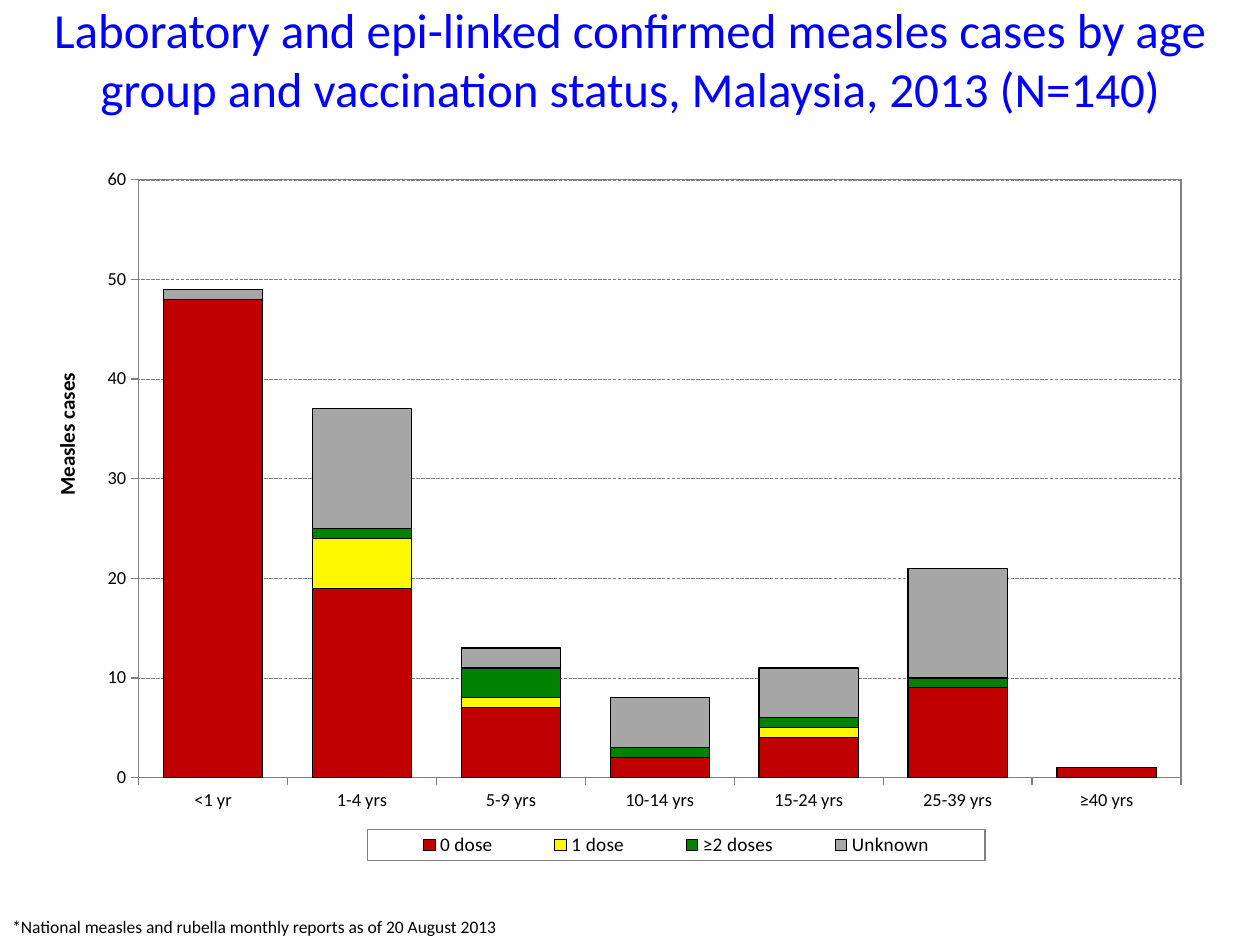
import pptx
import pptx.chart.data
import pptx.dml.color
import pptx.enum.chart
import pptx.enum.dml
import pptx.enum.text
import pptx.oxml
import pptx.oxml.ns
import pptx.util

Cm, Pt = pptx.util.Cm, pptx.util.Pt
RGBColor = pptx.dml.color.RGBColor
qn = pptx.oxml.ns.qn

BLACK = RGBColor(0x00, 0x00, 0x00)
BLUE = RGBColor(0x00, 0x00, 0xFF)
GREY = RGBColor(0x80, 0x80, 0x80)
FONT = "Calibri"

TITLE = ("Laboratory and epi-linked confirmed measles cases by age group "
         "and vaccination status, Malaysia, 2013 (N=140)")
SOURCE = "*National measles and rubella monthly reports as of 20 August 2013"
AXIS_TITLE = "Measles cases"
AGE_GROUPS = ["<1 yr", "1-4 yrs", "5-9 yrs", "10-14 yrs",
              "15-24 yrs", "25-39 yrs", "≥40 yrs"]
DOSES = [
    ("0 dose", RGBColor(0xC0, 0x00, 0x00), [48, 19, 7, 2, 4, 9, 1]),
    ("1 dose", RGBColor(0xFE, 0xF8, 0x00), [0, 5, 1, 0, 1, 0, 0]),
    ("≥2 doses", RGBColor(0x00, 0x82, 0x00), [0, 1, 3, 1, 1, 1, 0]),
    ("Unknown", RGBColor(0xA6, 0xA6, 0xA6), [1, 12, 2, 5, 5, 11, 0]),
]

NAMESPACES = pptx.oxml.ns.nsdecls("a", "c")
TITLE_SHADOW = (f'<a:effectLst {NAMESPACES}><a:outerShdw blurRad="0" dist="28000" '
                'dir="2700000" algn="tl"><a:srgbClr val="99CCFF"/>'
                '</a:outerShdw></a:effectLst>')
GREY_FRAME = (f'<c:spPr {NAMESPACES}><a:noFill/><a:ln w="9525"><a:solidFill>'
              f'<a:srgbClr val="{GREY}"/></a:solidFill></a:ln></c:spPr>')


def add_text(page, place, text, size, color):
    box = page.shapes.add_textbox(*[Cm(length) for length in place])
    box.text_frame.word_wrap = True
    para = box.text_frame.paragraphs[0]
    span = para.add_run()
    span.text = text
    span.font.name, span.font.size = FONT, Pt(size)
    span.font.color.rgb = color
    return box, para, span


def set_layout(element, index, fractions, inner=False):
    """Place a chart part by fractions (x, y and perhaps w, h) of the chart."""
    for old in element.findall(qn("c:layout")):
        element.remove(old)
    target = '<c:layoutTarget val="inner"/>' if inner else ""
    modes = '<c:xMode val="edge"/><c:yMode val="edge"/>'
    values = "".join(f'<c:{key} val="{value}"/>' for key, value in zip("xywh", fractions))
    element.insert(index, pptx.oxml.parse_xml(
        f"<c:layout {NAMESPACES}><c:manualLayout>{target}{modes}{values}"
        "</c:manualLayout></c:layout>"))


def style_font(font, size, bold=False):
    font.name, font.size, font.bold = FONT, Pt(size), bold
    font.color.rgb = BLACK


def style_line(line, color, width):
    line.color.rgb = color
    line.width = Pt(width)


def add_cases_chart(page):
    data = pptx.chart.data.CategoryChartData()
    data.categories = AGE_GROUPS
    for name, _, cases in DOSES:
        data.add_series(name, cases)
    chart = page.shapes.add_chart(
        pptx.enum.chart.XL_CHART_TYPE.COLUMN_STACKED,
        Cm(0.51), Cm(3.12), Cm(23.8), Cm(14.4), data).chart
    chart.has_title = False
    style_font(chart.font, 10)

    plot = chart.plots[0]
    plot.gap_width, plot.overlap = 50, 100
    plot.vary_by_categories = False
    for series, (_, color, _) in zip(plot.series, DOSES):
        series.format.fill.solid()
        series.format.fill.fore_color.rgb = color
        style_line(series.format.line, BLACK, 0.75)

    for axis in (chart.category_axis, chart.value_axis):
        axis.major_tick_mark = pptx.enum.chart.XL_TICK_MARK.OUTSIDE
        axis.minor_tick_mark = pptx.enum.chart.XL_TICK_MARK.NONE
        style_font(axis.tick_labels.font, 10.5)
        style_line(axis.format.line, GREY, 0.75)

    counts = chart.value_axis
    counts.minimum_scale, counts.maximum_scale, counts.major_unit = 0, 60, 10
    grid = counts.major_gridlines.format.line
    style_line(grid, GREY, 0.25)
    grid.dash_style = pptx.enum.dml.MSO_LINE.LONG_DASH
    span = counts.axis_title.text_frame.paragraphs[0].add_run()
    span.text = AXIS_TITLE
    style_font(span.font, 12, bold=True)
    title = counts.axis_title._element
    body = next(title.iter(qn("a:bodyPr")))
    body.set("rot", "-5400000")
    body.set("vert", "horz")
    set_layout(title, 1, (0.02, 0.3))

    chart.has_legend = True
    legend = chart.legend
    legend.position = pptx.enum.chart.XL_LEGEND_POSITION.BOTTOM
    legend.include_in_layout = False
    style_font(legend.font, 11)
    set_layout(legend._element, 1, (0.29, 0.945, 0.523, 0.043))
    legend._element.find(qn("c:overlay")).addnext(pptx.oxml.parse_xml(GREY_FRAME))

    plot_area = chart._chartSpace.chart.plotArea
    set_layout(plot_area, 0, (0.096, 0.035, 0.883, 0.837), inner=True)
    plot_area.append(pptx.oxml.parse_xml(GREY_FRAME))


def main():
    deck = pptx.Presentation()
    deck.slide_width, deck.slide_height = Cm(25.4), Cm(19.05)
    page = deck.slides.add_slide(deck.slide_layouts[6])

    box, para, span = add_text(page, (0, 0, 25.4, 2.34), TITLE, 28, BLUE)
    box.text_frame.vertical_anchor = pptx.enum.text.MSO_ANCHOR.MIDDLE
    para.alignment = pptx.enum.text.PP_ALIGN.CENTER
    span.font._element.find(qn("a:solidFill")).addnext(pptx.oxml.parse_xml(TITLE_SHADOW))

    add_cases_chart(page)
    add_text(page, (0, 18.34, 14.91, 0.71), SOURCE, 10, BLACK)
    deck.save("out.pptx")


if __name__ == "__main__":
    main()
